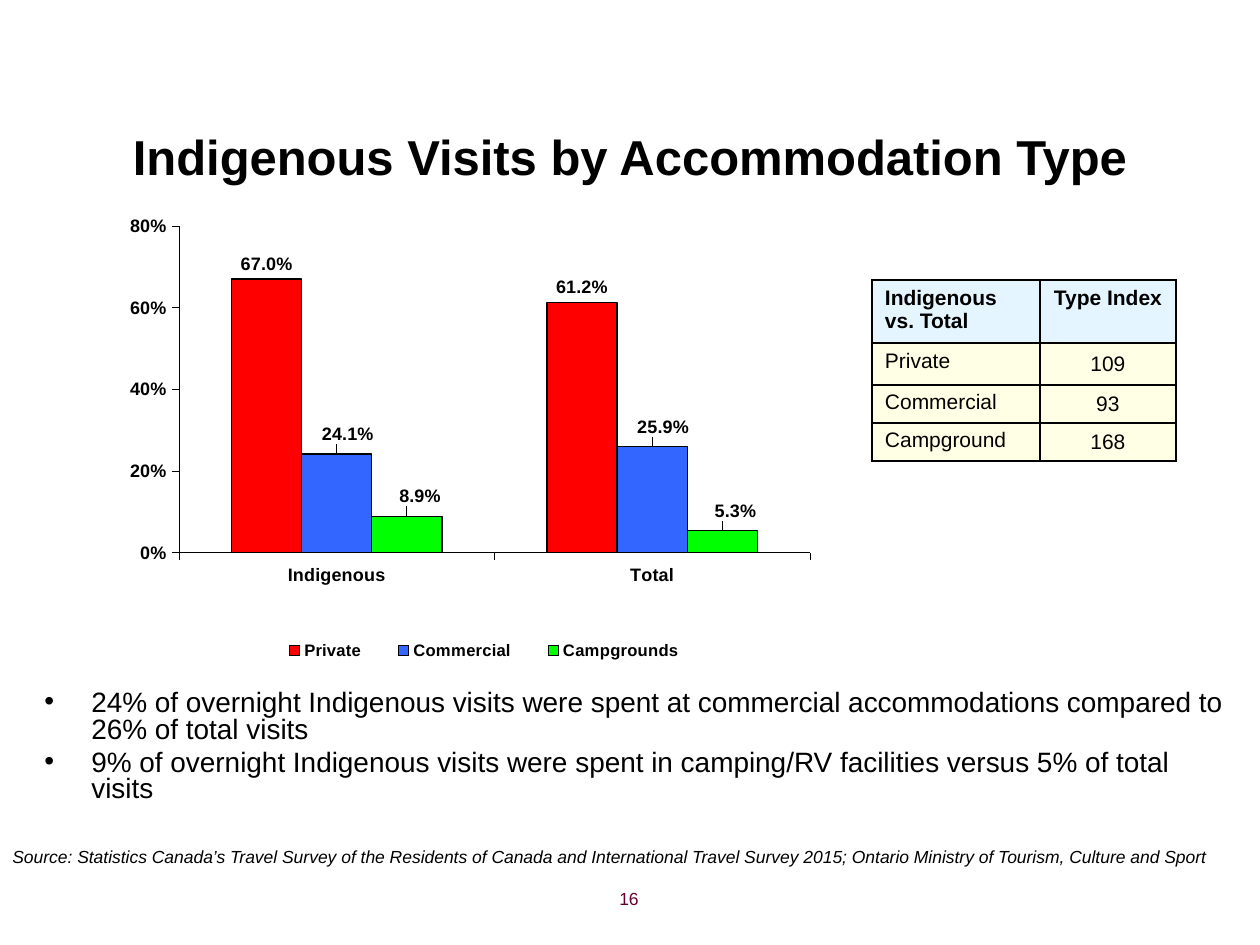
from dataclasses import dataclass

from lxml.etree import SubElement
from pptx import Presentation
from pptx.chart.data import CategoryChartData
from pptx.dml.color import RGBColor
from pptx.enum.chart import XL_CHART_TYPE, XL_LABEL_POSITION, XL_LEGEND_POSITION, XL_TICK_MARK
from pptx.enum.text import MSO_ANCHOR, PP_ALIGN
from pptx.oxml import parse_xml
from pptx.oxml.ns import nsdecls, qn
from pptx.util import Emu, Pt

EMU_PER_PX = 914400 / 126
FONT = "Arial"
BLACK = "000000"
LEFT, CENTER, RIGHT = PP_ALIGN.LEFT, PP_ALIGN.CENTER, PP_ALIGN.RIGHT


@dataclass
class TextBlock:
    area: tuple[int, int, int, int]
    lines: list[str]
    size: float
    color: str = BLACK
    align: PP_ALIGN = LEFT
    anchor: MSO_ANCHOR = MSO_ANCHOR.TOP
    bold: bool = False
    italic: bool = False
    bulleted: bool = False


@dataclass
class BarSeries:
    name: str
    values: tuple[float, float]
    color: str
    label_shift: tuple[float, float] | None = None


@dataclass
class IndexRow:
    name: str
    index: str
    height: int
    fill: str = "FFFFCC"
    header: bool = False


TEXTS = [
    TextBlock((63, 108, 1134, 95), ["Indigenous Visits by Accommodation Type"], 28,
              align=CENTER, anchor=MSO_ANCHOR.MIDDLE, bold=True),
    TextBlock((32, 685, 1218, 192), [
        "24% of overnight Indigenous visits were spent at commercial accommodations compared to 26% of total visits",
        "9% of overnight Indigenous visits were spent in camping/RV facilities versus 5% of total visits",
    ], 16, bulleted=True),
    TextBlock((357, 882, 294, 44), ["16"], 10, color="660033", align=RIGHT),
    TextBlock((0, 840, 1235, 34), [
        "Source: Statistics Canada’s Travel Survey of the Residents of Canada and International Travel Survey 2015; "
        "Ontario Ministry of Tourism, Culture and Sport",
    ], 10, italic=True),
]

SERIES = [
    BarSeries("Private", (0.67, 0.612), "FF0000"),
    BarSeries("Commercial", (0.241, 0.259), "3366FF", (0.015, -0.01)),
    BarSeries("Campgrounds", (0.089, 0.053), "00FF00", (0.018, -0.01)),
]

INDEX_ROWS = [
    IndexRow("Indigenous vs. Total", "Type Index", 63, "CCECFF", True),
    IndexRow("Private", "109", 42),
    IndexRow("Commercial", "93", 38),
    IndexRow("Campground", "168", 38),
]


def px(length: int) -> Emu:
    return Emu(round(length * EMU_PER_PX))


def rgb(color: str) -> RGBColor:
    return RGBColor.from_string(color)


def style_font(font, size: float, color: str = BLACK, bold: bool = False, italic: bool = False) -> None:
    font.name = FONT
    font.size = Pt(size)
    font.bold = bold
    font.italic = italic
    font.color.rgb = rgb(color)


def add_bullet(para) -> None:
    properties = para._p.get_or_add_pPr()
    properties.set("marL", str(px(47)))
    properties.set("indent", str(-px(47)))
    SubElement(properties, qn("a:buFont"), typeface=FONT)
    SubElement(properties, qn("a:buChar"), char="•")


def add_text(page, block: TextBlock) -> None:
    frame = page.shapes.add_textbox(*map(px, block.area)).text_frame
    frame.word_wrap = True
    frame.vertical_anchor = block.anchor
    for number, line in enumerate(block.lines):
        para = frame.add_paragraph() if number else frame.paragraphs[0]
        para.text = line
        para.alignment = block.align
        if block.bulleted:
            add_bullet(para)
            para.line_spacing = 0.8
        if number:
            para.space_before = Pt(block.size * 0.2)
        style_font(para.font, block.size, block.color, block.bold, block.italic)


def manual_layout(**places: float | str):
    items = "".join(f'<c:{name} val="{value}"/>' for name, value in places.items())
    return parse_xml(f'<c:layout {nsdecls("c")}><c:manualLayout>{items}</c:manualLayout></c:layout>')


def shift_labels(series, shift: tuple[float, float]) -> None:
    for number in range(len(series.values)):
        label = series.points[number].data_label
        style_font(label.font, 10.3, bold=True)
        label.position = XL_LABEL_POSITION.OUTSIDE_END
    for element in series._element.xpath("c:dLbls/c:dLbl"):
        element.insert(1, manual_layout(x=shift[0], y=shift[1]))
        element.insert(2, parse_xml(f'<c:numFmt {nsdecls("c")} formatCode="0.0%" sourceLinked="0"/>'))


def style_axis(axis) -> None:
    axis.has_major_gridlines = False
    axis.major_tick_mark = XL_TICK_MARK.OUTSIDE
    axis.minor_tick_mark = XL_TICK_MARK.NONE
    axis.format.line.color.rgb = rgb(BLACK)
    axis.format.line.width = Pt(0.18)
    style_font(axis.tick_labels.font, 10.3, bold=True)


def add_visits_chart(page) -> None:
    data = CategoryChartData(number_format="0.0%")
    data.categories = ["Indigenous", "Total"]
    for item in SERIES:
        data.add_series(item.name, item.values)
    chart = page.shapes.add_chart(
        XL_CHART_TYPE.COLUMN_CLUSTERED, *map(px, (102, 200, 742, 474)), data).chart
    chart.has_title = False
    style_font(chart.font, 15.8, bold=True)
    style_axis(chart.category_axis)
    style_axis(chart.value_axis)
    chart.value_axis.minimum_scale = 0
    chart.value_axis.maximum_scale = 0.8
    chart.value_axis.major_unit = 0.2
    chart.value_axis.tick_labels.number_format = "0%"
    chart.value_axis.tick_labels.number_format_is_linked = False

    plot = chart.plots[0]
    plot.gap_width = 150
    plot.overlap = 0
    plot.vary_by_categories = False
    for series, item in zip(plot.series, SERIES):
        series.format.fill.solid()
        series.format.fill.fore_color.rgb = rgb(item.color)
        series.format.line.color.rgb = rgb(BLACK)
        series.format.line.width = Pt(0.75)
        labels = series.data_labels
        labels.show_value = True
        labels.number_format = "0.0%"
        labels.number_format_is_linked = False
        labels.position = XL_LABEL_POSITION.OUTSIDE_END
        style_font(labels.font, 10.3, bold=True)
        if item.label_shift:
            shift_labels(series, item.label_shift)

    chart.has_legend = True
    chart.legend.position = XL_LEGEND_POSITION.BOTTOM
    chart.legend.include_in_layout = False
    style_font(chart.legend.font, 9.5, bold=True)
    edges = {"xMode": "edge", "yMode": "edge"}
    areas = [
        (plot._element.getparent(), 0, manual_layout(layoutTarget="inner", **edges, x=0.104, y=0.055, w=0.85, h=0.689)),
        (chart.legend._element, 1, manual_layout(**edges, x=0.21, y=0.92, w=0.61, h=0.06)),
    ]
    for owner, position, layout in areas:
        for old in owner.findall(qn("c:layout")):
            owner.remove(old)
        owner.insert(position, layout)


def style_cell(cell, text: str, row: IndexRow, centered: bool) -> None:
    cell.text = text
    para = cell.text_frame.paragraphs[0]
    para.alignment = CENTER if centered else LEFT
    style_font(para.font, 12, bold=row.header)
    is_number = centered and not row.header
    cell.vertical_anchor = MSO_ANCHOR.MIDDLE if is_number else MSO_ANCHOR.TOP
    cell.margin_left = cell.margin_right = px(0 if is_number else 13)
    cell.margin_top = cell.margin_bottom = px(0 if is_number else 6)
    cell.fill.solid()
    cell.fill.fore_color.rgb = rgb(row.fill)
    properties = cell._tc.get_or_add_tcPr()
    SubElement(properties.find(".//" + qn("a:srgbClr")), qn("a:alpha"), val="50000")
    for position, side in enumerate("LRTB"):
        properties.insert(position, parse_xml(
            f'<a:ln{side} {nsdecls("a")} w="{Pt(1)}"><a:solidFill>'
            f'<a:srgbClr val="{BLACK}"/></a:solidFill></a:ln{side}>'))


def add_index_table(page) -> None:
    widths = (168, 136)
    height = sum(row.height for row in INDEX_ROWS)
    table = page.shapes.add_table(
        len(INDEX_ROWS), len(widths), *map(px, (872, 280, sum(widths), height))).table
    table.first_row = False
    table.horz_banding = False
    for column, width in zip(table.columns, widths):
        column.width = px(width)
    for number, row in enumerate(INDEX_ROWS):
        table.rows[number].height = px(row.height)
        style_cell(table.cell(number, 0), row.name, row, False)
        style_cell(table.cell(number, 1), row.index, row, True)


def main() -> None:
    deck = Presentation()
    deck.slide_width, deck.slide_height = px(1260), px(945)
    page = deck.slides.add_slide(deck.slide_layouts[6])
    add_visits_chart(page)
    add_index_table(page)
    for block in TEXTS:
        add_text(page, block)
    deck.save("out.pptx")


if __name__ == "__main__":
    main()
